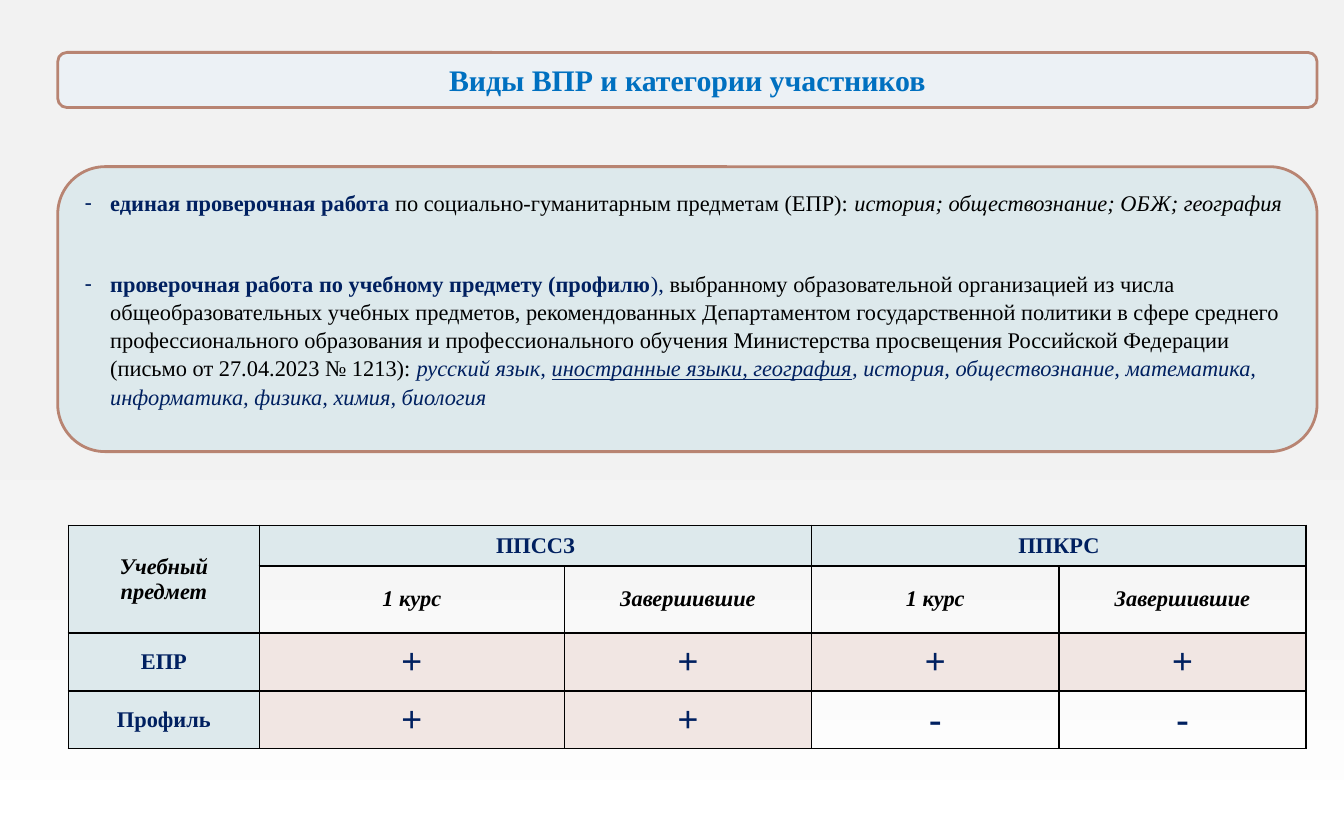
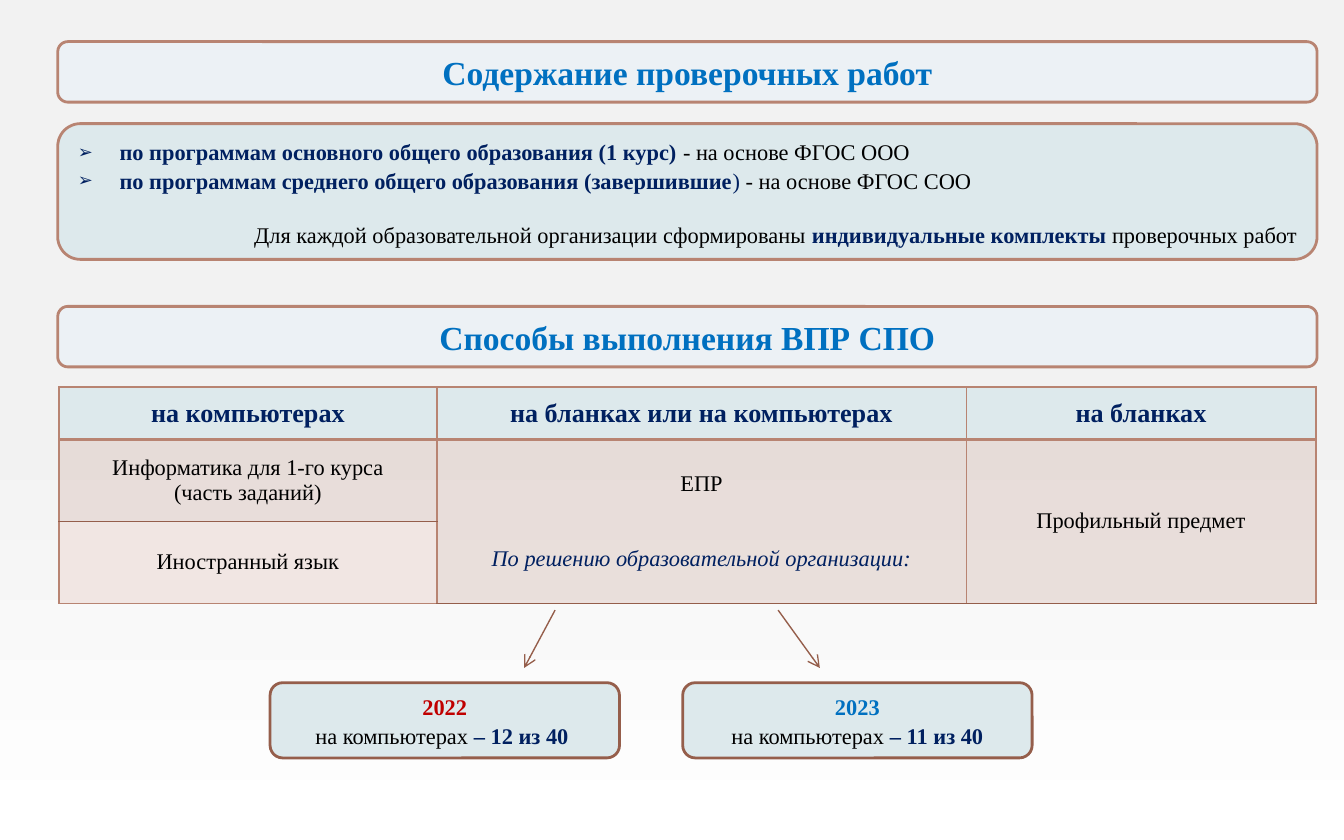
from copy import deepcopy

from lxml import etree
from pptx import Presentation
from pptx.dml.color import RGBColor
from pptx.enum.shapes import MSO_CONNECTOR, MSO_SHAPE
from pptx.enum.text import MSO_ANCHOR, MSO_AUTO_SIZE, PP_ALIGN
from pptx.oxml.ns import qn
from pptx.util import Inches, Pt

CENTER, RIGHT, FROM_LEFT = PP_ALIGN.CENTER, PP_ALIGN.RIGHT, PP_ALIGN.LEFT
MIDDLE, TOP = MSO_ANCHOR.MIDDLE, MSO_ANCHOR.TOP
ROUNDED, STRAIGHT = MSO_SHAPE.ROUNDED_RECTANGLE, MSO_CONNECTOR.STRAIGHT
NO_FIT = MSO_AUTO_SIZE.NONE

FONT = "Times New Roman"
BLACK = RGBColor(0x00, 0x00, 0x00)
WHITE = RGBColor(0xFF, 0xFF, 0xFF)
GRAY = RGBColor(0xF2, 0xF2, 0xF2)
BLUE = RGBColor(0x00, 0x70, 0xC0)
NAVY = RGBColor(0x00, 0x20, 0x60)
RED = RGBColor(0xC0, 0x00, 0x00)
BAND = RGBColor(0xEC, 0xF1, 0xF5)
PALE_BLUE = RGBColor(0xDD, 0xE9, 0xEC)
PINK = RGBColor(0xF1, 0xE6, 0xE3)
CLAY = RGBColor(0xB8, 0x84, 0x72)
BROWN = RGBColor(0x95, 0x5E, 0x4B)

# Shared column of the page: left edge and width
LEFT, WIDTH = 0.43, 9.37


def add_panel(slide, box, fill, line=CLAY, holder=None, inset=(0.1, 0.05), anchor=MIDDLE):
    """Rounded panel; its text goes into the placeholder, if one is given."""
    left, top, width, height = map(Inches, box)
    panel = slide.shapes.add_shape(ROUNDED, left, top, width, height)
    panel.shadow.inherit = False
    panel.fill.solid()
    panel.fill.fore_color.rgb = fill
    panel.line.color.rgb = line
    panel.line.width = Pt(1.5)
    if holder is not None:
        holder.left, holder.top, holder.width, holder.height = left, top, width, height
        holder.element.addprevious(panel.element)
    frame = (panel if holder is None else holder).text_frame
    frame.word_wrap = True
    frame.auto_size = NO_FIT
    frame.vertical_anchor = anchor
    frame.margin_left = frame.margin_right = Inches(inset[0])
    frame.margin_top = frame.margin_bottom = Inches(inset[1])
    return frame


def write(frame, number, runs, size=12, align=CENTER, before=0, spacing=1.0, bullet=None):
    """Paragraph of (text, colour, style letters) runs; bullet is (char, indent, percent)."""
    paragraph = frame.paragraphs[0] if number == 0 else frame.add_paragraph()
    paragraph.alignment = align
    paragraph.space_before = Pt(before)
    paragraph.line_spacing = spacing
    props = paragraph._p.get_or_add_pPr()
    char, indent, percent = bullet or (None, 0, 100)
    props.set("marL", str(Inches(indent)))
    props.set("indent", str(-Inches(indent)))
    if char:
        color = etree.SubElement(props, qn("a:buClr"))
        etree.SubElement(color, qn("a:srgbClr"), val=str(NAVY))
        etree.SubElement(props, qn("a:buSzPct"), val=str(percent * 1000))
        etree.SubElement(props, qn("a:buChar"), char=char)
    else:
        etree.SubElement(props, qn("a:buNone"))
    for text, color, style in runs:
        run = paragraph.add_run()
        run.text = text
        run.font.name = FONT
        run.font.size = Pt(size)
        run.font.color.rgb = color
        run.font.bold = "b" in style
        run.font.italic = "i" in style
        run.font.underline = "u" in style


prs = Presentation()
prs.slide_width, prs.slide_height = Inches(10), Inches(6.25)

# Shared background: flat gray above, fading to white below
background = prs.slide_master.background.fill
background.gradient()
background.gradient_angle = 270
for stop, color, position in zip(background.gradient_stops, (GRAY, WHITE), (0.5, 1)):
    stop.color.rgb = color
    stop.position = position
stops = prs.slide_master.element.xpath("p:cSld/p:bg//a:gsLst")[0]
first_stop = deepcopy(stops[0])
first_stop.set("pos", "0")
stops.insert(0, first_stop)

layout = prs.slide_layouts[1]
kinds = prs.slides.add_slide(layout)
content = prs.slides.add_slide(layout)

# Title bands
for slide, top, height, size, heading, is_title in (
    (kinds, 0.39, 0.41, 16, "Виды ВПР и категории участников", True),
    (content, 0.31, 0.45, 18, "Содержание проверочных работ", True),
    (content, 2.28, 0.45, 18, "Способы выполнения ВПР СПО", False),
):
    holder = slide.shapes.title if is_title else None
    band = add_panel(slide, (LEFT, top, WIDTH, height), BAND, holder=holder)
    write(band, 0, [(heading, BLUE, "b")], size)

# Slide 1: kinds of tests
kinds_list = add_panel(kinds, (LEFT, 1.24, WIDTH, 2.12), PALE_BLUE,
                       holder=kinds.placeholders[1], inset=(0.2, 0.16), anchor=TOP)
dash = ("-", 0.19, 100)
write(kinds_list, 0, [
    ("единая проверочная работа ", NAVY, "b"),
    ("по социально-гуманитарным предметам (ЕПР): ", BLACK, ""),
    ("история; обществознание; ОБЖ; география", BLACK, "i"),
], align=FROM_LEFT, spacing=1.05, bullet=dash)
write(kinds_list, 1, [
    ("проверочная работа по учебному предмету (профилю", NAVY, "b"),
    ("), ", NAVY, ""),
    ("выбранному образовательной организацией из числа общеобразовательных учебных "
     "предметов, рекомендованных Департаментом государственной политики в сфере среднего "
     "профессионального образования и профессионального обучения Министерства просвещения "
     "Российской Федерации (письмо от 27.04.2023 № 1213): ", BLACK, ""),
    ("русский язык, ", NAVY, "i"),
    ("иностранные языки, география", NAVY, "iu"),
    (", история, обществознание, математика, информатика, физика, химия, биология",
     NAVY, "i"),
], align=FROM_LEFT, before=28, spacing=1.05, bullet=dash)

# Slide 2: content of the tests
programs = add_panel(content, (LEFT, 0.92, WIDTH, 1.01), PALE_BLUE,
                     holder=content.placeholders[1], inset=(0.15, 0.1), anchor=TOP)
arrow_mark = ("➢", 0.31, 80)
write(programs, 0, [
    ("по программам основного общего образования (1 курс) ", NAVY, "b"),
    ("- на основе ФГОС ООО", BLACK, ""),
], align=FROM_LEFT, spacing=1.05, bullet=arrow_mark)
write(programs, 1, [
    ("по программам среднего общего образования (завершившие", NAVY, "b"),
    (") ", NAVY, ""),
    ("- на основе ФГОС СОО", BLACK, ""),
], align=FROM_LEFT, spacing=1.05, bullet=arrow_mark)
write(programs, 2, [
    ("Для каждой образовательной организации сформированы ", BLACK, ""),
    ("индивидуальные комплекты ", NAVY, "b"),
    ("проверочных работ", BLACK, ""),
], align=RIGHT, before=14, spacing=1.05)

# Table cells: row, column, rows spanned, columns spanned, fill, alpha, size, lines
participants = [
    (0, 0, 2, 1, PALE_BLUE, 100, 12, [("Учебный предмет", BLACK, "bi")]),
    (0, 1, 1, 2, PALE_BLUE, 100, 12, [("ППССЗ", NAVY, "b")]),
    (0, 3, 1, 2, PALE_BLUE, 100, 12, [("ППКРС", NAVY, "b")]),
]
for column, stage in enumerate(("1 курс", "Завершившие") * 2, 1):
    participants.append((1, column, 1, 1, None, 100, 12, [(stage, BLACK, "bi")]))
for row, (subject, marks) in enumerate((("ЕПР", "++++"), ("Профиль", "++--")), 2):
    participants.append((row, 0, 1, 1, PALE_BLUE, 100, 12, [(subject, NAVY, "b")]))
    for column, mark in enumerate(marks, 1):
        participants.append((row, column, 1, 1, PINK if mark == "+" else None, 100, 20,
                             [(mark, NAVY, "b")]))

methods = [(0, column, 1, 1, PALE_BLUE, 100, 14, [(method, NAVY, "b")])
           for column, method in enumerate(
               ("на компьютерах", "на бланках или на компьютерах", "на бланках"))]
methods += [
    (1, 0, 1, 1, CLAY, 20, 12, [("Информатика для 1-го курса", BLACK, ""),
                                ("(часть заданий)", BLACK, "")]),
    (1, 1, 2, 1, CLAY, 20, 12, [("ЕПР", BLACK, ""),
                                ("По решению образовательной организации:", NAVY, "i")]),
    (1, 2, 2, 1, CLAY, 20, 12, [("Профильный предмет", BLACK, "")]),
    (2, 0, 1, 1, PINK, 100, 12, [("Иностранный язык", BLACK, "")]),
]

# Border rules: (row, side) pairs that differ from the table's usual 1 pt line
method_rules = {(0, "B"): (CLAY, 2), (1, "T"): (CLAY, 2),
                (1, "B"): (BROWN, 1), (2, "T"): (BROWN, 1), (2, "B"): (CLAY, 1)}

for slide, left, top, widths, heights, cells, border, rules in (
    (kinds, 0.51, 3.91, [1.42, 2.27] + [1.84] * 3, [0.3, 0.5, 0.43, 0.43],
     participants, BLACK, {}),
    (content, 0.44, 2.88, [2.81, 3.94, 2.6], [0.39, 0.61, 0.61],
     methods, CLAY, method_rules),
):
    table = slide.shapes.add_table(
        len(heights), len(widths), Inches(left), Inches(top),
        Inches(sum(widths)), Inches(sum(heights))).table
    table.first_row = table.horz_banding = False
    for column, width in zip(table.columns, widths):
        column.width = Inches(width)
    for row, height in zip(table.rows, heights):
        row.height = Inches(height)
    for row, column, down, across, fill, alpha, size, lines in cells:
        for r in range(row, row + down):
            for c in range(column, column + across):
                cell = table.cell(r, c)
                props = cell._tc.get_or_add_tcPr()
                for side in "LRTB":
                    color, points = rules.get((r, side), (border, 1))
                    edge = etree.SubElement(props, qn("a:ln" + side), w=str(Pt(points)))
                    solid = etree.SubElement(edge, qn("a:solidFill"))
                    etree.SubElement(solid, qn("a:srgbClr"), val=str(color))
                if fill is None:
                    cell.fill.background()
                    continue
                cell.fill.solid()
                cell.fill.fore_color.rgb = fill
                if alpha < 100:
                    tint = props.find(qn("a:solidFill")).find(qn("a:srgbClr"))
                    etree.SubElement(tint, qn("a:alpha"), val=str(alpha * 1000))
        cell = table.cell(row, column)
        if down * across > 1:
            cell.merge(table.cell(row + down - 1, column + across - 1))
        cell.vertical_anchor = MIDDLE
        cell.margin_left = cell.margin_right = Inches(0.2)
        for number, line in enumerate(lines):
            apart = 27 if number and down > 1 else 0
            write(cell.text_frame, number, [line], size, before=apart)

# Slide 2: results by year, each with an arrow from the table
for left, year, color, share, start, end in (
    (2.01, "2022", RED, "– 12 из 40 ", 4.13, 3.9),
    (5.08, "2023", BLUE, "– 11 из 40", 5.79, 6.1),
):
    result = add_panel(content, (left, 5.08, 2.6, 0.56), PALE_BLUE, BROWN)
    write(result, 0, [(year, color, "b")], spacing=1.05)
    write(result, 1, [("на компьютерах ", BLACK, ""), (share, NAVY, "b")], spacing=1.05)
    arrow = content.shapes.add_connector(
        STRAIGHT, Inches(start), Inches(4.54), Inches(end), Inches(4.97))
    arrow.line.color.rgb = BROWN
    arrow.line.width = Pt(0.75)
    etree.SubElement(arrow.line._get_or_add_ln(), qn("a:tailEnd"), type="arrow")
    etree.SubElement(arrow.element.spPr, qn("a:effectLst"))

prs.save("out.pptx")
